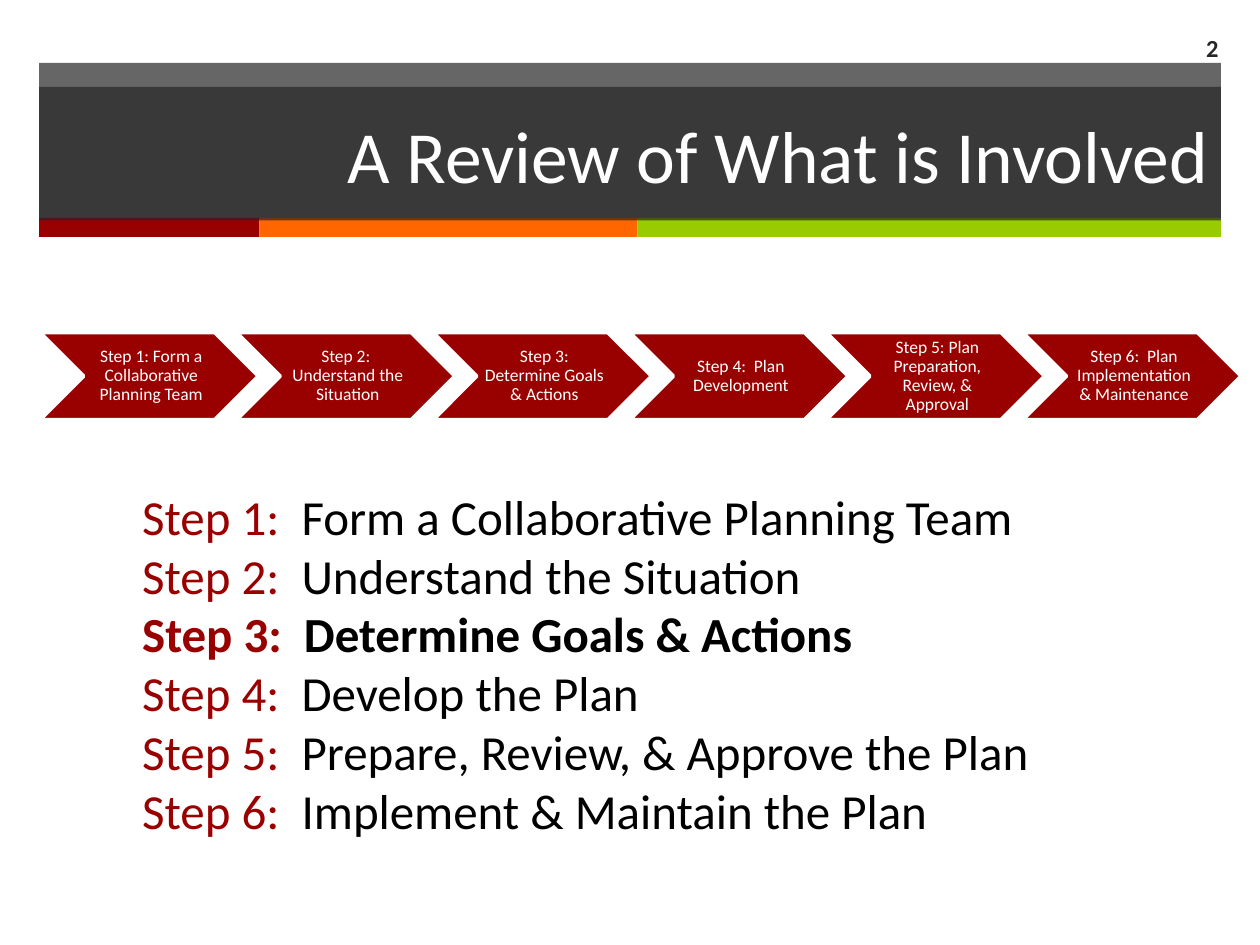
from dataclasses import dataclass

from lxml import etree
from pptx import Presentation
from pptx import util as u
from pptx.dml.color import RGBColor
from pptx.enum import shapes, text
from pptx.oxml.ns import qn


@dataclass(frozen=True)
class Theme:
    font: str = "Calibri"
    dark: str = "262626"
    red: str = "990000"
    orange: str = "FF6600"
    green: str = "99CC00"
    white: str = "FFFFFF"
    black: str = "000000"
    title_size: int = 42
    list_size: int = 28
    number_size: int = 14
    chevron_size: int = 10
    band_opacity: int = 70


THEME = Theme()

CHEVRON_LABELS = [
    "Step 1: Form a Collaborative Planning Team",
    "Step 2:  Understand the Situation",
    "Step 3: Determine Goals & Actions",
    "Step 4:  Plan Development",
    "Step 5: Plan Preparation, Review, & Approval",
    "Step 6:  Plan Implementation & Maintenance",
]
STEPS = [
    "Form a Collaborative Planning Team",
    "Understand the Situation",
    "Determine Goals & Actions",
    "Develop the Plan",
    "Prepare, Review, & Approve the Plan",
    "Implement & Maintain the Plan",
]
CURRENT_STEP = 3


def box(left, top, width, height):
    return [u.Inches(value) for value in (left, top, width, height)]


def style_font(font, size, color, bold=False):
    font.name = THEME.font
    font.size = u.Pt(size)
    font.bold = bold
    font.color.rgb = RGBColor.from_string(color)


def add_filled(slide, kind, bounds, color, opacity=100):
    shape = slide.shapes.add_shape(kind, *box(*bounds))
    shape.shadow.inherit = False
    shape.fill.solid()
    shape.fill.fore_color.rgb = RGBColor.from_string(color)
    shape.line.fill.background()
    if opacity < 100:
        color_element = shape.fill._xPr.find(qn("a:solidFill"))[0]
        alpha = etree.SubElement(color_element, qn("a:alpha"))
        alpha.set("val", str(opacity * 1000))
    return shape


def write_line(shape, wording, size, color, alignment, bold=False):
    frame = shape.text_frame
    frame.word_wrap = True
    frame.vertical_anchor = text.MSO_ANCHOR.MIDDLE
    paragraph = frame.paragraphs[0]
    paragraph.text = wording
    paragraph.alignment = alignment
    style_font(paragraph.font, size, color, bold)
    return paragraph


def add_header(slide):
    rectangle = shapes.MSO_SHAPE.RECTANGLE
    left, width = 0.31, 9.38
    add_filled(slide, rectangle, (left, 0.5, width, 1.24),
               THEME.dark, THEME.band_opacity)
    stripe_left = left
    for stripe_width, color in ((1.75, THEME.red), (3, THEME.orange),
                                (4.63, THEME.green)):
        add_filled(slide, rectangle, (stripe_left, 1.73, stripe_width, 0.15), color)
        stripe_left += stripe_width
    title = add_filled(slide, rectangle, (left, 0.69, width, 1.06),
                       THEME.dark, THEME.band_opacity)
    write_line(title, "A Review of What is Involved", THEME.title_size,
               THEME.white, text.PP_ALIGN.RIGHT)


def add_chevrons(slide):
    for index, label in enumerate(CHEVRON_LABELS):
        chevron = add_filled(slide, shapes.MSO_SHAPE.CHEVRON,
                             (0.32 + 1.56 * index, 2.64, 1.73, 0.69), THEME.red)
        chevron.line.color.rgb = RGBColor.from_string(THEME.white)
        chevron.line.width = u.Pt(2)
        frame = chevron.text_frame
        frame.margin_left = u.Inches(0.04)
        frame.margin_right = frame.margin_top = frame.margin_bottom = u.Inches(0.01)
        paragraph = write_line(chevron, label, THEME.chevron_size,
                               THEME.white, text.PP_ALIGN.CENTER)
        paragraph.line_spacing = 0.9


def add_step_list(slide):
    frame = slide.shapes.add_textbox(*box(1.03, 3.81, 8.3, 2.93)).text_frame
    frame.word_wrap = True
    for number, step in enumerate(STEPS, start=1):
        paragraph = frame.paragraphs[0] if number == 1 else frame.add_paragraph()
        for wording, color in ((f"Step {number}:  ", THEME.red), (step, THEME.black)):
            run = paragraph.add_run()
            run.text = wording
            style_font(run.font, THEME.list_size, color, number == CURRENT_STEP)


def add_slide_number(slide):
    number = slide.shapes.add_textbox(*box(9.08, 0.18, 0.69, 0.39))
    write_line(number, "2", THEME.number_size, THEME.dark,
               text.PP_ALIGN.RIGHT, bold=True)


def main():
    presentation = Presentation()
    presentation.slide_width = u.Inches(10)
    presentation.slide_height = u.Inches(7.5)
    slide = presentation.slides.add_slide(presentation.slide_layouts[6])
    add_header(slide)
    add_chevrons(slide)
    add_step_list(slide)
    add_slide_number(slide)
    presentation.save("out.pptx")


if __name__ == "__main__":
    main()
